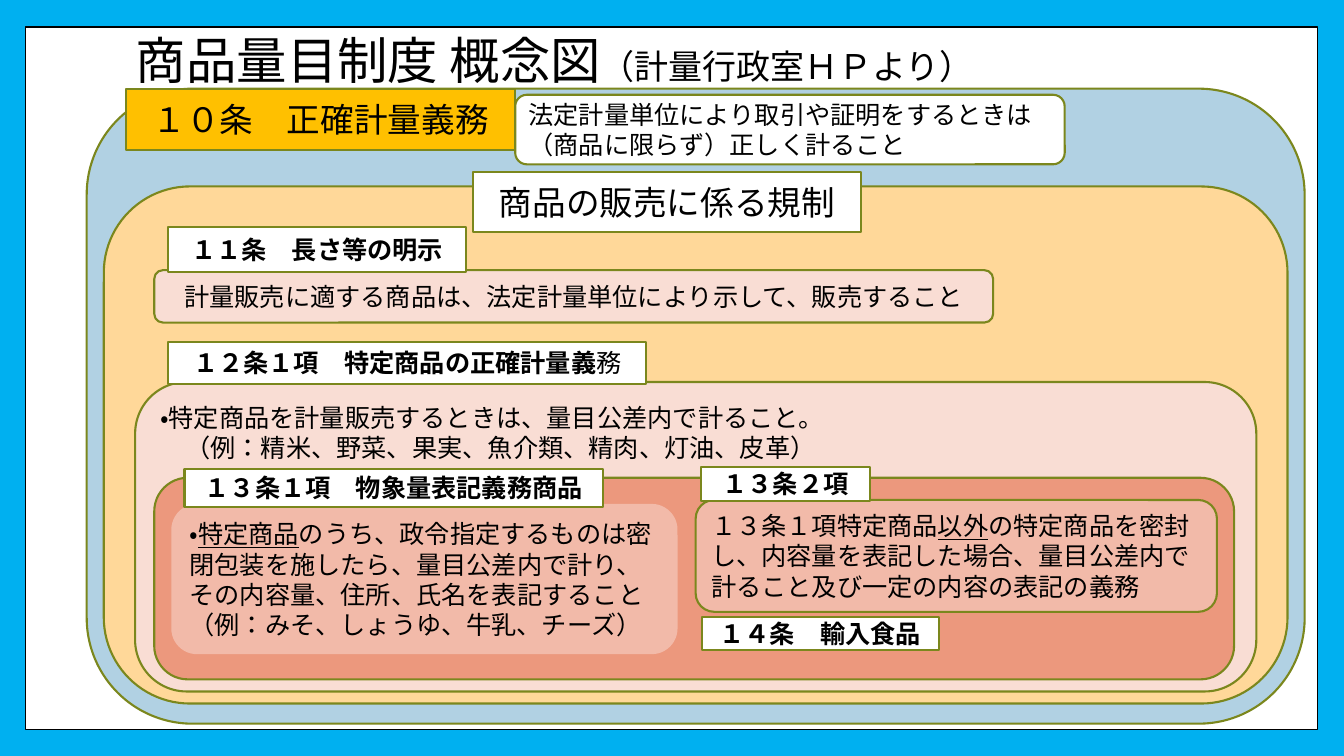
"""Build the concept slide of nested commodity quantity rules."""
from dataclasses import dataclass

import pptx
import pptx.dml.color
import pptx.enum.lang
import pptx.enum.shapes
import pptx.enum.text
import pptx.util
from pptx.slide import Slide

PX = 9144
FONT = "Calibri"
COLORS = {
    "background": "00B0F0",
    "black": "000000",
    "white": "FFFFFF",
    "olive": "7B871D",
    "blue": "B1D1E3",
    "gold": "FFC000",
    "sand": "FFD899",
    "blush": "F9DDD4",
    "coral": "EC987D",
    "salmon": "F2BAA9",
}
RECTANGLE = pptx.enum.shapes.MSO_SHAPE.RECTANGLE
ROUNDED = pptx.enum.shapes.MSO_SHAPE.ROUNDED_RECTANGLE
LEFT = pptx.enum.text.PP_ALIGN.LEFT
CENTER = pptx.enum.text.PP_ALIGN.CENTER
TOP = pptx.enum.text.MSO_ANCHOR.TOP
MIDDLE = pptx.enum.text.MSO_ANCHOR.MIDDLE


@dataclass(frozen=True)
class Run:
    text: str
    size: float = 18
    bold: bool = False
    underline: bool = False


@dataclass(frozen=True)
class Box:
    left: int
    top: int
    width: int
    height: int
    fill: str
    paragraphs: tuple[tuple[Run, ...], ...] = ()
    line: str = "olive"
    line_width: float = 1.5
    kind: pptx.enum.shapes.MSO_SHAPE = ROUNDED
    align: pptx.enum.text.PP_ALIGN = LEFT
    anchor: pptx.enum.text.MSO_ANCHOR = MIDDLE


def label(left: int, top: int, width: int, height: int, *runs: Run, fill: str = "white") -> Box:
    return Box(left, top, width, height, fill, (runs,), kind=RECTANGLE, align=CENTER)


TITLE = (Run("商品量目制度 概念図", 36), Run("（計量行政室ＨＰより）", 24.3))
BOXES = (
    Box(25, 27, 1282, 697, "white", line="black", line_width=1, kind=RECTANGLE),
    Box(86, 88, 1208, 630, "blue"),
    Box(511, 94, 545, 69, "white",
        ((Run("法定計量単位により取引や証明をするときは（商品に限らず）正しく計ること"),),)),
    label(125, 88, 386, 61, Run("１０条　正確計量義務", 24), fill="gold"),
    Box(103, 185, 1174, 513, "sand"),
    label(469, 171, 385, 59, Run("商品の販売に係る規制", 24)),
    Box(153, 268, 832, 52, "blush",
        ((Run("計量販売に適する商品は、法定計量単位により示して、販売すること"),),), align=CENTER),
    label(167, 225, 295, 45, Run("１１条　長さ等の明示", bold=True)),
    Box(134, 379, 1112, 307, "blush",
        ((Run("・特定商品を計量販売するときは、量目公差内で計ること。"),),
         (Run("　（例：精米、野菜、果実、魚介類、精肉、灯油、皮革）"),)), anchor=TOP),
    label(167, 339, 474, 42, Run("１２条１項　特定商品の正確計量義", bold=True), Run("務")),
    Box(153, 474, 1071, 200, "coral"),
    Box(171, 501, 500, 147, "salmon",
        ((Run("・"), Run("特定商品", underline=True),
          Run("のうち、政令指定するものは密閉包装を施したら、量目公差内で計り、"
              "その内容量、住所、氏名を表記すること")),
         (Run("（例：みそ、しょうゆ、牛乳、チーズ）"),)), line="salmon"),
    label(183, 465, 415, 38, Run("１３条１項　物象量表記義務商品", bold=True)),
    Box(690, 496, 517, 111, "salmon",
        ((Run("１３条１項特定商品"), Run("以外", underline=True),
          Run("の特定商品を密封し、内容量を表記した場合、量目公差内で"
              "計ること及び一定の内容の表記の義務")),)),
    label(695, 463, 168, 34, Run("１３条２項", bold=True)),
    label(696, 612, 235, 33, Run("１４条　輸入食品", bold=True)),
)


def color(name: str) -> pptx.dml.color.RGBColor:
    return pptx.dml.color.RGBColor.from_string(COLORS[name])


def write_runs(paragraph, runs: tuple[Run, ...]) -> None:
    for item in runs:
        run = paragraph.add_run()
        run.text = item.text
        run.font.name = FONT
        run.font.size = pptx.util.Pt(item.size)
        run.font.bold = item.bold
        run.font.underline = item.underline
        run.font.color.rgb = color("black")
        run.font.language_id = pptx.enum.lang.MSO_LANGUAGE_ID.JAPANESE


def draw_box(slide: Slide, box: Box) -> None:
    shape = slide.shapes.add_shape(
        box.kind, box.left * PX, box.top * PX, box.width * PX, box.height * PX)
    shape.shadow.inherit = False
    shape.fill.solid()
    shape.fill.fore_color.rgb = color(box.fill)
    shape.line.color.rgb = color(box.line)
    shape.line.width = pptx.util.Pt(box.line_width)
    text_frame = shape.text_frame
    text_frame.word_wrap = True
    text_frame.vertical_anchor = box.anchor
    for index, runs in enumerate(box.paragraphs):
        paragraph = text_frame.add_paragraph() if index else text_frame.paragraphs[0]
        paragraph.alignment = box.align
        write_runs(paragraph, runs)


def draw_title(slide: Slide) -> None:
    shape = slide.shapes.add_textbox(125 * PX, 38 * PX, 1080 * PX, 50 * PX)
    text_frame = shape.text_frame
    text_frame.word_wrap = True
    text_frame.vertical_anchor = MIDDLE
    paragraph = text_frame.paragraphs[0]
    paragraph.line_spacing = 0.9
    write_runs(paragraph, TITLE)


def main() -> None:
    presentation = pptx.Presentation()
    presentation.slide_width = 1333 * PX
    presentation.slide_height = 750 * PX
    slide = presentation.slides.add_slide(presentation.slide_layouts[6])
    slide.background.fill.solid()
    slide.background.fill.fore_color.rgb = color("background")
    for box in BOXES:
        draw_box(slide, box)
    draw_title(slide)
    presentation.save("out.pptx")


if __name__ == "__main__":
    main()
